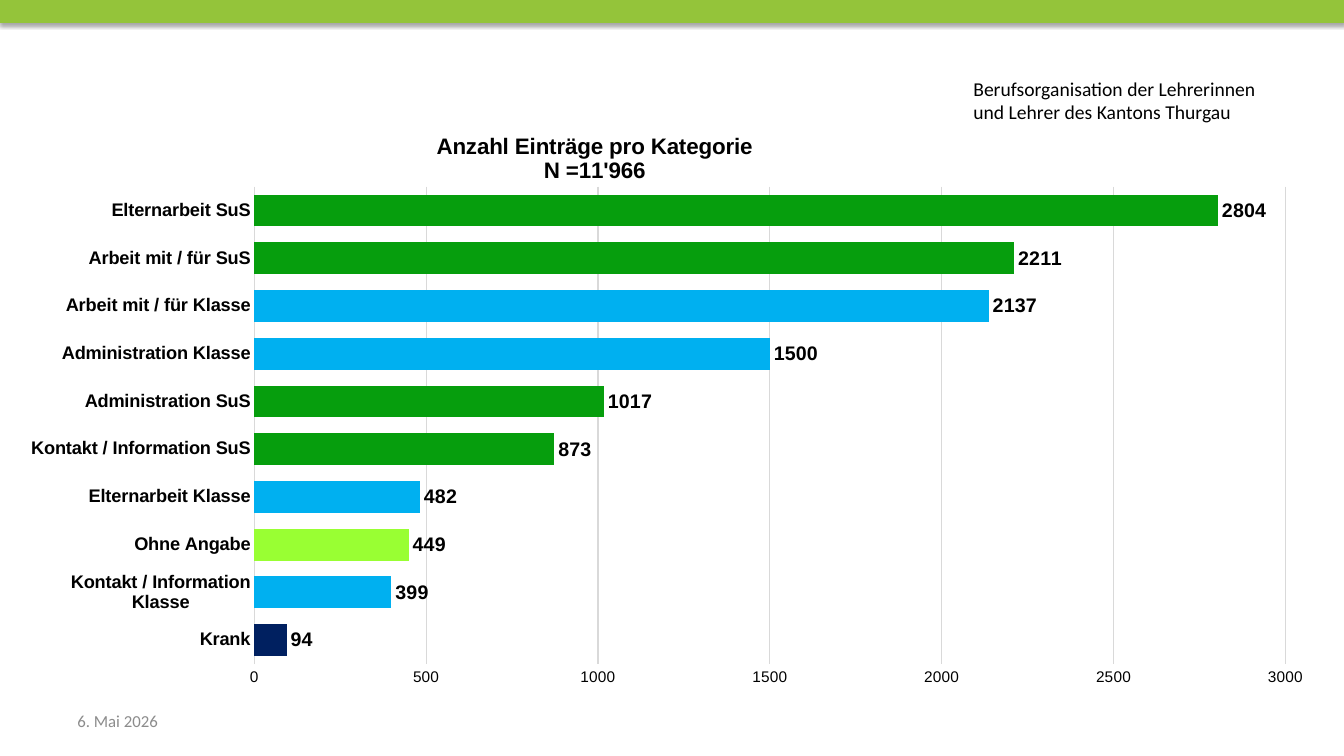
from lxml import etree
from pptx import Presentation
from pptx import util as u
from pptx.chart.data import CategoryChartData
from pptx.dml.color import RGBColor
from pptx.enum import chart as ch, shapes, text
from pptx.oxml import parse_xml
from pptx.oxml.ns import nsdecls, qn

KLASSE, SUS, GRID = "00B0F0", "069E0D", "D9D9D9"
ENTRIES = [
    ("Krank", 94, "002060"),
    ("Kontakt / Information Klasse", 399, KLASSE),
    ("Ohne Angabe", 449, "99FF33"),
    ("Elternarbeit Klasse", 482, KLASSE),
    ("Kontakt / Information SuS", 873, SUS),
    ("Administration SuS", 1017, SUS),
    ("Administration Klasse", 1500, KLASSE),
    ("Arbeit mit / für Klasse", 2137, KLASSE),
    ("Arbeit mit / für SuS", 2211, SUS),
    ("Elternarbeit SuS", 2804, SUS),
]


def rgb(code):
    return RGBColor.from_string(code)


def assign(target, **values):
    for name, value in values.items():
        setattr(target, name, value)


def set_font(font, size, color="000000", name="Arial", bold=False):
    assign(font, size=u.Pt(size), name=name, bold=bold)
    font.color.rgb = rgb(color)


def set_layout(parent, position, **fractions):
    """Place a chart part by fractions of the chart's size."""
    layout = parent.find(qn("c:layout"))
    if layout is None:
        layout = etree.Element(qn("c:layout"))
        parent.insert(position, layout)
    manual = etree.SubElement(layout, qn("c:manualLayout"))
    if "w" in fractions:
        etree.SubElement(manual, qn("c:layoutTarget")).set("val", "inner")
    for mode in ("xMode", "yMode"):
        etree.SubElement(manual, qn(f"c:{mode}")).set("val", "edge")
    for key, value in fractions.items():
        etree.SubElement(manual, qn(f"c:{key}")).set("val", str(value))


class SlideBuilder:
    def __init__(self, prs):
        self.slide = prs.slides.add_slide(prs.slide_layouts[6])
        self.font = "Calibri"

    def rectangle(self, box, color):
        shape = self.slide.shapes.add_shape(
            shapes.MSO_SHAPE.RECTANGLE, *map(u.Cm, box))
        shape.shadow.inherit = False
        shape.fill.solid()
        shape.fill.fore_color.rgb = rgb(color)
        shape.line.fill.background()
        return shape

    def band(self, box, color):
        """Add a bar with a soft shadow below it."""
        properties = self.rectangle(box, color)._element.spPr
        properties.remove(properties.find(qn("a:effectLst")))
        properties.append(parse_xml(
            f'<a:effectLst {nsdecls("a")}>'
            '<a:outerShdw blurRad="39370" dist="22860" dir="5400000" rotWithShape="0">'
            '<a:srgbClr val="000000"><a:alpha val="35000"/></a:srgbClr>'
            '</a:outerShdw></a:effectLst>'))

    def fill_text(self, shape, lines, size, color):
        frame = shape.text_frame
        assign(frame, word_wrap=True, vertical_anchor=text.MSO_ANCHOR.MIDDLE)
        for i, line in enumerate(lines):
            paragraph = frame.add_paragraph() if i else frame.paragraphs[0]
            paragraph.text = line
            paragraph.alignment = text.PP_ALIGN.LEFT
            set_font(paragraph.font, size, color, self.font)

    def panel(self, box, lines, size):
        self.fill_text(self.rectangle(box, "FFFFFF"), lines, size, "000000")

    def label(self, box, lines, size, color):
        holder = self.slide.shapes.add_textbox(*map(u.Cm, box))
        self.fill_text(holder, lines, size, color)

    def bar_chart(self, box, title_lines, entries):
        data = CategoryChartData()
        data.categories = [name for name, _, _ in entries]
        data.add_series("Series 1", [count for _, count, _ in entries])
        chart = self.slide.shapes.add_chart(
            ch.XL_CHART_TYPE.BAR_CLUSTERED, *map(u.Cm, box), data).chart
        chart.has_legend = False
        set_font(chart.font, 10)
        self.chart_title(chart, title_lines)
        self.axes(chart)
        self.bars(chart.plots[0], entries)
        set_layout(chart._chartSpace.chart.plotArea, 0,
                   x=0.175, y=0.109, w=0.805, h=0.828)

    def chart_title(self, chart, lines):
        title = chart.chart_title
        frame = title.text_frame
        for i, line in enumerate(lines):
            paragraph = frame.add_paragraph() if i else frame.paragraphs[0]
            run = paragraph.add_run()
            run.text = line
            for font in (paragraph.font, run.font):
                set_font(font, 16, bold=True)
        set_layout(title._element, 1, x=0.315, y=0.01)

    def axes(self, chart):
        names, counts = chart.category_axis, chart.value_axis
        for axis, size, bold in ((names, 13, True), (counts, 11, False)):
            assign(axis, major_tick_mark=ch.XL_TICK_MARK.NONE,
                   minor_tick_mark=ch.XL_TICK_MARK.NONE)
            set_font(axis.tick_labels.font, size, bold=bold)
        assign(counts, minimum_scale=0, maximum_scale=3000, major_unit=500,
               has_major_gridlines=True)
        counts.format.line.fill.background()
        for line in (names.format.line, counts.major_gridlines.format.line):
            line.color.rgb = rgb(GRID)
            line.width = u.Pt(0.75)

    def bars(self, plot, entries):
        assign(plot, gap_width=50, vary_by_categories=False, has_data_labels=True)
        labels = plot.data_labels
        assign(labels, show_value=True, position=ch.XL_LABEL_POSITION.OUTSIDE_END)
        set_font(labels.font, 14, bold=True)
        series = plot.series[0]
        series.format.fill.solid()
        series.format.fill.fore_color.rgb = rgb(SUS)
        for i, (_, _, color) in enumerate(entries):
            if color != SUS:
                fill = series.points[i].format.fill
                fill.solid()
                fill.fore_color.rgb = rgb(color)


def main():
    prs = Presentation()
    assign(prs, slide_width=u.Cm(33.87), slide_height=u.Cm(19.05))
    builder = SlideBuilder(prs)
    builder.band((0, 0, 33.87, 0.58), "94C43A")
    builder.panel((24.28, 0.89, 7.9, 3.28),
                  ["Berufsorganisation der Lehrerinnen",
                   "und Lehrer des Kantons Thurgau"], 14)
    builder.label((1.7, 17.65, 7.9, 1.02), ["6. Mai 2026"], 12, "8C8C8C")
    builder.bar_chart((0.76, 3.12, 32.28, 14.53),
                      ["Anzahl Einträge pro Kategorie", "N =11'966"], ENTRIES)
    prs.save("out.pptx")


if __name__ == "__main__":
    main()
